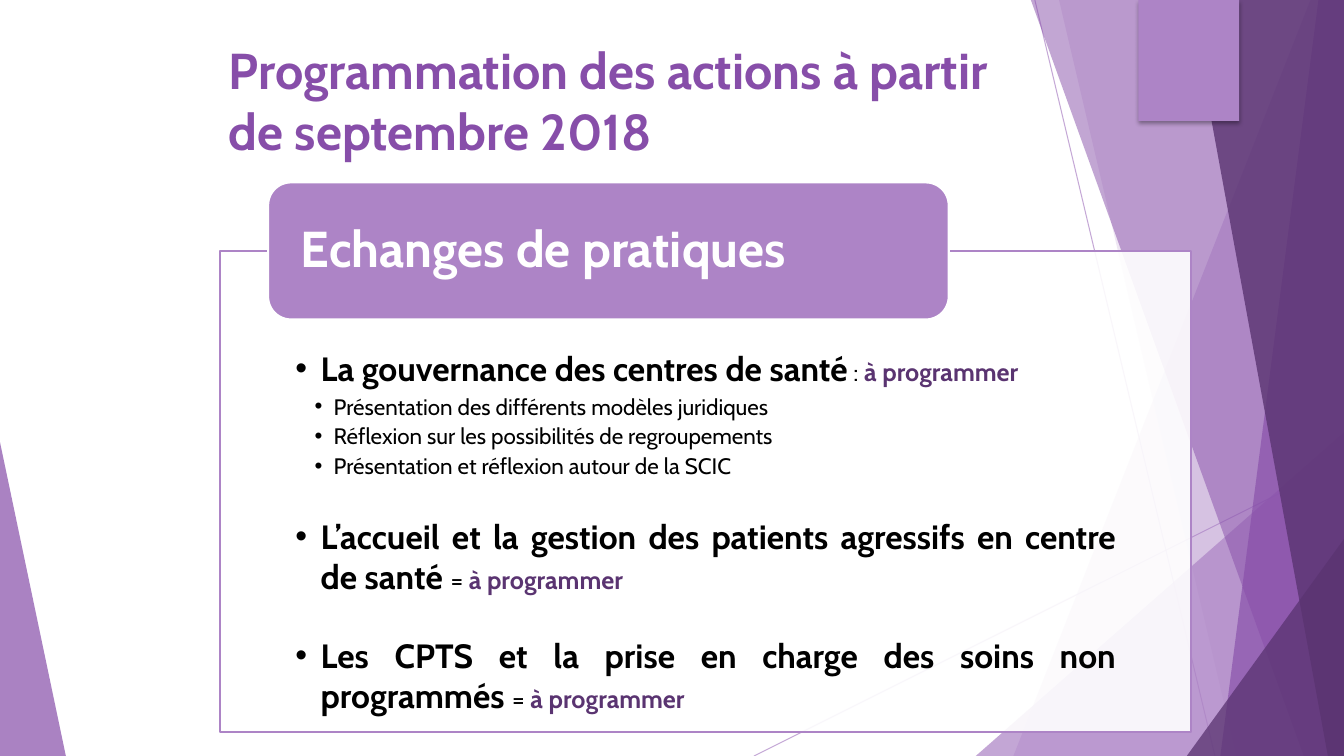
from dataclasses import dataclass, field

from lxml import etree
from pptx import Presentation
from pptx import util as u
from pptx.dml.color import RGBColor
from pptx.enum import shapes, text
from pptx.oxml.ns import qn

WIDTH, HEIGHT = u.Inches(13.33), u.Inches(7.5)
LILAC, VIOLET, PLUM = "AD84C6", "874EA9", "5A3471"
WHITE, BLACK = "FFFFFF", "000000"
BULLET = "•"


@dataclass
class Facet:
    corners: list[tuple[float, float]]
    color: str
    opacity: int


@dataclass
class Ray:
    start: tuple[float, float]
    end: tuple[float, float]


@dataclass
class Block:
    area: tuple[float, float, float, float]
    preset: shapes.MSO_SHAPE = shapes.MSO_SHAPE.RECTANGLE
    fill: str | None = None
    opacity: int = 100
    line: str | None = None


@dataclass
class Span:
    words: str
    size: int
    color: str = BLACK
    bold: bool = True


@dataclass
class Para:
    spans: list[Span]
    margin: float = 0
    hanging: float = 0
    layout: dict = field(default_factory=dict)


def across(percent: float) -> int:
    return round(WIDTH * percent / 100)


def down(percent: float) -> int:
    return round(HEIGHT * percent / 100)


def paint(target, color: str, opacity: int = 100) -> None:
    target.solid()
    target.fore_color.rgb = RGBColor.from_string(color)
    if opacity < 100:
        tone = next(target._xPr.iter(qn("a:srgbClr")))
        etree.SubElement(tone, qn("a:alpha"), val=str(opacity * 1000))


def apply(target, values: dict) -> None:
    for name, value in values.items():
        setattr(target, name, value)


def draw_ray(page, ray: Ray) -> None:
    (x1, y1), (x2, y2) = ray.start, ray.end
    line = page.shapes.add_connector(
        shapes.MSO_CONNECTOR.STRAIGHT, across(x1), down(y1), across(x2), down(y2))
    paint(line.line.fill, LILAC, 70)
    line.line.width = u.Pt(0.75)
    etree.SubElement(line._element.spPr, qn("a:effectLst"))


def draw_facet(page, facet: Facet) -> None:
    first, *rest = [(across(x), down(y)) for x, y in facet.corners]
    builder = page.shapes.build_freeform(*first)
    builder.add_line_segments(rest, close=True)
    shape = builder.convert_to_shape()
    shape.shadow.inherit = False
    paint(shape.fill, facet.color, facet.opacity)
    shape.line.fill.background()


def draw_block(page, block: Block):
    x, y, w, h = block.area
    shape = page.shapes.add_shape(block.preset, across(x), down(y), across(w), down(h))
    shape.shadow.inherit = False
    paint(shape.fill, block.fill, block.opacity)
    if block.line:
        paint(shape.line.fill, block.line)
        shape.line.width = u.Pt(1.5)
    else:
        shape.line.fill.background()
    return shape


def cast_shadow(shape) -> None:
    effects = shape._element.spPr.find(qn("a:effectLst"))
    shadow = etree.SubElement(
        effects, qn("a:outerShdw"), blurRad=str(u.Pt(3)), dist=str(u.Pt(2)),
        dir="5400000", algn="t", rotWithShape="0")
    tone = etree.SubElement(shadow, qn("a:srgbClr"), val=BLACK)
    etree.SubElement(tone, qn("a:alpha"), val="35000")


def write(box, paras: list[Para], frame_format: dict) -> None:
    frame = box.text_frame
    apply(frame, {"word_wrap": True, "auto_size": text.MSO_AUTO_SIZE.NONE} | frame_format)
    for index, item in enumerate(paras):
        para = frame.add_paragraph() if index else frame.paragraphs[0]
        if item.margin:
            props = para._p.get_or_add_pPr()
            props.set("marL", str(across(item.margin)))
            props.set("indent", str(-across(item.hanging)))
            etree.SubElement(props, qn("a:buFont"), typeface="Arial")
            etree.SubElement(props, qn("a:buChar"), char=BULLET)
        apply(para, {"alignment": text.PP_ALIGN.LEFT} | item.layout)
        for part in item.spans:
            span = para.add_run()
            span.text = part.words
            apply(span.font, {"name": "Cabin", "size": u.Pt(part.size), "bold": part.bold})
            paint(span.font.fill, part.color)


def topic(words: str, sign: str, gap: int) -> Para:
    spans = [Span(words, 24), Span(sign, 18, bold=False), Span("à programmer", 18, PLUM)]
    return Para(spans, 1.88, 1.88, {
        "alignment": text.PP_ALIGN.JUSTIFY, "space_before": u.Pt(gap), "space_after": u.Pt(3.5)})


def detail(words: str) -> Para:
    return Para([Span(words, 16, bold=False)], 2.85, 1.43, {
        "alignment": text.PP_ALIGN.JUSTIFY, "space_before": u.Pt(0), "space_after": u.Pt(2)})


RAYS = [Ray((56.1, 100), (100, 61)), Ray((77, 0), (90.4, 100))]
FACETS = [
    Facet([(97.5, 0), (75.4, 100), (100, 100), (100, 0)], LILAC, 36),
    Facet([(78.8, 0), (92, 100), (100, 100), (100, 0)], LILAC, 20),
    Facet([(72.6, 100), (100, 57.2), (100, 100)], LILAC, 72),
    Facet([(76.7, 0), (97, 100), (100, 100), (100, 0)], VIOLET, 50),
    Facet([(98.1, 0), (90.8, 100), (100, 100), (100, 0)], VIOLET, 66),
    Facet([(88.5, 0), (98.8, 100), (100, 100), (100, 0)], PLUM, 80),
    Facet([(88.3, 100), (100, 71.3), (100, 100)], PLUM, 76),
    Facet([(0, 58.5), (4.9, 100), (0, 100)], VIOLET, 70),
]
TAG = Block((84.7, 0, 7.5, 16), fill=LILAC)
PANEL = Block((16.35, 33.2, 72.3, 63.6), fill=WHITE, opacity=90, line=LILAC)
HEADER = Block((19.95, 24.13, 50.64, 18.13), shapes.MSO_SHAPE.ROUNDED_RECTANGLE,
               fill=LILAC, line=WHITE)
TITLE_AREA = (16.28, 4.53, 58.2, 19.2)
TOPICS = [
    topic("La gouvernance des centres de santé", " : ", 0),
    detail("Présentation des différents modèles juridiques"),
    detail("Réflexion sur les possibilités de regroupements"),
    detail("Présentation et réflexion autour de la SCIC"),
    topic("L’accueil et la gestion des patients agressifs en centre de santé ", "= ", 24),
    topic("Les CPTS et la prise en charge des soins non programmés ", "= ", 24),
]


def main() -> None:
    deck = Presentation()
    apply(deck, {"slide_width": WIDTH, "slide_height": HEIGHT})
    page = deck.slides.add_slide(deck.slide_layouts[6])
    for ray in RAYS:
        draw_ray(page, ray)
    for facet in FACETS:
        draw_facet(page, facet)
    cast_shadow(draw_block(page, TAG))
    write(draw_block(page, PANEL), TOPICS, {
        "margin_left": across(5.63), "margin_right": across(5.63),
        "margin_top": down(12.8), "margin_bottom": down(2.53),
        "vertical_anchor": text.MSO_ANCHOR.TOP})
    write(draw_block(page, HEADER),
          [Para([Span("Echanges de pratiques", 36, WHITE)], layout={"line_spacing": 0.9})],
          {"margin_left": across(1.95), "margin_right": across(1.95), "margin_top": 0,
           "margin_bottom": 0, "vertical_anchor": text.MSO_ANCHOR.MIDDLE})
    x, y, w, h = TITLE_AREA
    title = page.shapes.add_textbox(across(x), down(y), across(w), down(h))
    write(title, [Para([Span("Programmation des actions à partir de septembre 2018", 36, VIOLET)])],
          {"vertical_anchor": text.MSO_ANCHOR.TOP})
    deck.save("out.pptx")


if __name__ == "__main__":
    main()
